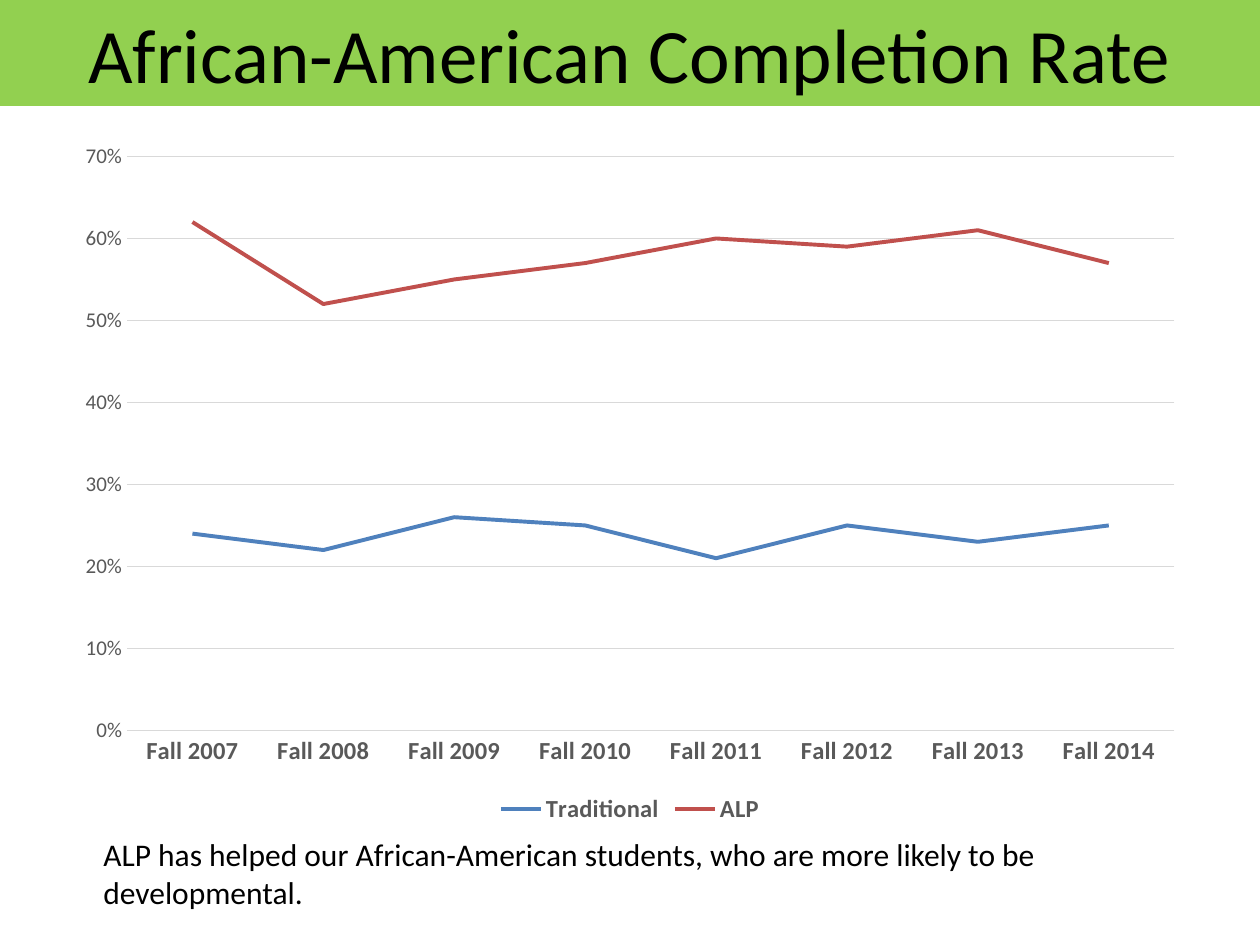
from dataclasses import dataclass

from pptx import Presentation
from pptx.chart.data import CategoryChartData
from pptx.dml.color import RGBColor
from pptx.enum.chart import XL_CHART_TYPE, XL_LEGEND_POSITION, XL_TICK_MARK
from pptx.enum.shapes import MSO_SHAPE
from pptx.enum.text import MSO_ANCHOR, PP_ALIGN
from pptx.util import Pt

TITLE = "African-American Completion Rate"
NOTE = "ALP has helped our African-American students, who are more likely to be developmental."
TERMS = [f"Fall {year}" for year in range(2007, 2015)]
RATES = {
    "Traditional": (0.24, 0.22, 0.26, 0.25, 0.21, 0.25, 0.23, 0.25),
    "ALP": (0.62, 0.52, 0.55, 0.57, 0.60, 0.59, 0.61, 0.57),
}

# left, top, width, height in px
SLIDE_SIZE = (1260, 945)
TITLE_BOX = (0, 0, 1260, 106)
CHART_BOX = (63, 130, 1134, 699)
NOTE_BOX = (91, 829, 1118, 89)


@dataclass(frozen=True)
class Theme:
    font: str = "Calibri"
    banner: str = "92D050"
    text: str = "000000"
    label: str = "595959"
    grid: str = "D9D9D9"
    series: tuple = ("4F81BD", "C0504D")
    title_size: int = 44
    note_size: int = 18
    category_size: int = 14
    value_size: int = 12
    grid_width: float = 0.75
    series_width: float = 2.25


THEME = Theme()


def px(*lengths):
    """Turn pixels (126 to the inch) into EMU."""
    return [round(n * 914400 / 126) for n in lengths]


def set_font(font, size, color, bold=False):
    font.name = THEME.font
    font.size = Pt(size)
    font.bold = bold
    font.color.rgb = RGBColor.from_string(color)


def set_line(line, color, width):
    line.color.rgb = RGBColor.from_string(color)
    line.width = Pt(width)


def write(sp, text, *, size, color=THEME.text, align=PP_ALIGN.LEFT, anchor=MSO_ANCHOR.TOP):
    tf = sp.text_frame
    tf.word_wrap = True
    tf.vertical_anchor = anchor
    p = tf.paragraphs[0]
    p.alignment = align
    r = p.add_run()
    r.text = text
    set_font(r.font, size, color)


def add_title(s):
    sp = s.shapes.add_shape(MSO_SHAPE.RECTANGLE, *px(*TITLE_BOX))
    sp.shadow.inherit = False
    sp.fill.solid()
    sp.fill.fore_color.rgb = RGBColor.from_string(THEME.banner)
    sp.line.fill.background()
    write(sp, TITLE, size=THEME.title_size, align=PP_ALIGN.CENTER, anchor=MSO_ANCHOR.MIDDLE)


def add_rate_chart(s):
    data = CategoryChartData(number_format="0%")
    data.categories = TERMS
    for name, values in RATES.items():
        data.add_series(name, values)
    chart = s.shapes.add_chart(XL_CHART_TYPE.LINE, *px(*CHART_BOX), data).chart
    chart.has_title = False
    chart.has_legend = True
    chart.legend.position = XL_LEGEND_POSITION.BOTTOM
    chart.legend.include_in_layout = False
    set_font(chart.legend.font, THEME.category_size, THEME.label, bold=True)

    terms, rates = chart.category_axis, chart.value_axis
    for axis in (terms, rates):
        axis.major_tick_mark = axis.minor_tick_mark = XL_TICK_MARK.NONE
    set_font(terms.tick_labels.font, THEME.category_size, THEME.label, bold=True)
    set_line(terms.format.line, THEME.grid, THEME.grid_width)

    set_font(rates.tick_labels.font, THEME.value_size, THEME.label)
    rates.tick_labels.number_format = "0%"
    rates.tick_labels.number_format_is_linked = False
    rates.minimum_scale, rates.maximum_scale, rates.major_unit = 0, 0.7, 0.1
    rates.format.line.fill.background()
    set_line(rates.major_gridlines.format.line, THEME.grid, THEME.grid_width)

    plot = chart.plots[0]
    plot.vary_by_categories = False
    for series, color in zip(plot.series, THEME.series):
        series.smooth = False
        set_line(series.format.line, color, THEME.series_width)


def main():
    prs = Presentation()
    prs.slide_width, prs.slide_height = px(*SLIDE_SIZE)
    s = prs.slides.add_slide(prs.slide_layouts[6])
    add_title(s)
    add_rate_chart(s)
    write(s.shapes.add_textbox(*px(*NOTE_BOX)), NOTE, size=THEME.note_size)
    prs.save("out.pptx")


if __name__ == "__main__":
    main()
